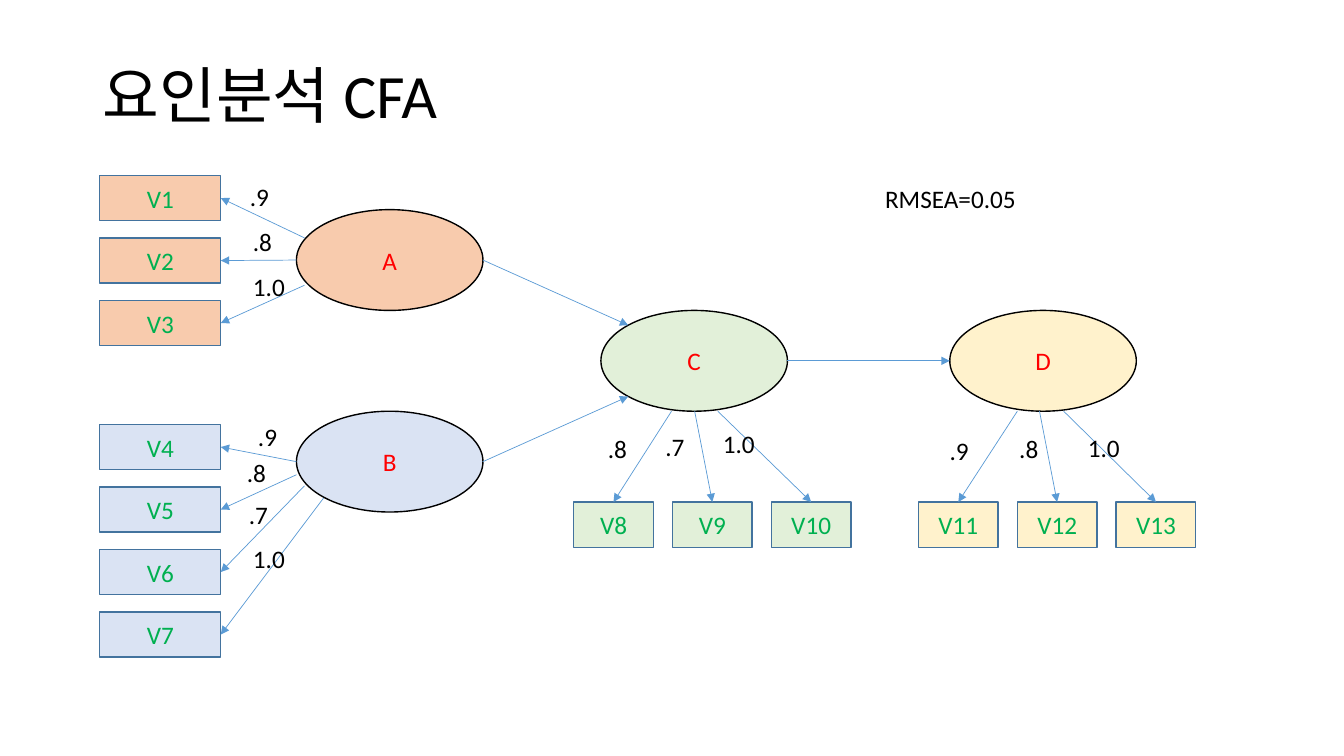
from dataclasses import dataclass
from math import sqrt

from lxml.etree import SubElement
from pptx import Presentation
from pptx.dml.color import RGBColor as Rgb
from pptx.enum.shapes import MSO_CONNECTOR as Link, MSO_SHAPE as Preset
from pptx.enum.text import MSO_ANCHOR as Anchor, MSO_AUTO_SIZE as AutoSize, PP_ALIGN as Align
from pptx.oxml.ns import qn
from pptx.util import Pt

PX = 9144


@dataclass(frozen=True)
class Theme:
    font: str = "Calibri"
    title_size: int = 44
    body_size: int = 18
    ink: str = "000000"
    factor_ink: str = "FF0000"
    indicator_ink: str = "00B050"
    indicator_edge: str = "43739E"
    arrow: str = "5B9BD5"
    peach: str = "F8CBAD"
    blue: str = "DAE3F3"
    green: str = "E2F0D9"
    yellow: str = "FFF2CC"


@dataclass(frozen=True)
class Box:
    left: int
    top: int
    width: int
    height: int

    def emu(self):
        return [round(v * PX) for v in (self.left, self.top, self.width, self.height)]

    def at(self, dx, dy):
        return self.left + dx, self.top + dy


@dataclass(frozen=True)
class Layout:
    first: tuple
    size: tuple
    step: tuple
    side: int


THEME = Theme()
FACTOR_SIZE = 185, 100
TOP, RIGHT = 0, 3


def beside(first_top):
    return Layout((-195, first_top), (120, 45), (0, 62), RIGHT)


def below(first_left):
    return Layout((first_left, 190), (79, 45), (98, 0), TOP)


def style(paragraph, size, color, align):
    paragraph.alignment = align
    paragraph.font.name = THEME.font
    paragraph.font.size = Pt(size)
    paragraph.font.color.rgb = Rgb.from_string(color)


def add_title(slide, box, wording):
    title = slide.shapes.title
    title.left, title.top, title.width, title.height = box.emu()
    frame = title.text_frame
    frame.text = wording
    frame.auto_size = AutoSize.NONE
    frame.vertical_anchor = Anchor.MIDDLE
    frame.paragraphs[0].line_spacing = 0.9
    style(frame.paragraphs[0], THEME.title_size, THEME.ink, Align.LEFT)


def add_node(slide, preset, box, name, fill, edge, ink):
    node = slide.shapes.add_shape(preset, *box.emu())
    node.shadow.inherit = False
    node.fill.solid()
    node.fill.fore_color.rgb = Rgb.from_string(fill)
    node.line.color.rgb = Rgb.from_string(edge)
    node.line.width = Pt(1)
    frame = node.text_frame
    frame.text = name
    frame.vertical_anchor = Anchor.MIDDLE
    style(frame.paragraphs[0], THEME.body_size, ink, Align.CENTER)
    return node


def add_arrow(slide, start, end):
    arrow = slide.shapes.add_connector(Link.STRAIGHT, *[round(v * PX) for v in (*start, *end)])
    arrow.line.color.rgb = Rgb.from_string(THEME.arrow)
    arrow.line.width = Pt(0.5)
    SubElement(arrow.line._get_or_add_ln(), qn("a:tailEnd"), type="triangle")
    SubElement(arrow._element.spPr, qn("a:effectLst"))
    return arrow


def add_label(slide, box, wording):
    frame = slide.shapes.add_textbox(*box.emu()).text_frame
    frame.text = wording
    frame.word_wrap = False
    frame.auto_size = AutoSize.SHAPE_TO_FIT_TEXT
    style(frame.paragraphs[0], THEME.body_size, THEME.ink, Align.LEFT)


def add_factor(slide, box, name, fill, layout, indicators):
    add_node(slide, Preset.OVAL, box, name, fill, THEME.ink, THEME.factor_ink)
    (first_x, first_y), (step_x, step_y) = layout.first, layout.step
    for i, (indicator, loading, start, label_at) in enumerate(indicators):
        place = Box(*box.at(first_x + i * step_x, first_y + i * step_y), *layout.size)
        node = add_node(slide, Preset.RECTANGLE, place, indicator, fill,
                        THEME.indicator_edge, THEME.indicator_ink)
        arrow = add_arrow(slide, box.at(*start), place.at(0, 0))
        arrow.end_connect(node, layout.side)
        add_label(slide, Box(*box.at(*label_at), 13 * len(loading) + 13, 40), loading)


def add_structure(slide, a, b, c, d):
    width, height = FACTOR_SIZE
    inset = (1 - 1 / sqrt(2)) / 2
    right = width, height / 2
    add_arrow(slide, a.at(*right), c.at(width * inset, height * inset))
    add_arrow(slide, b.at(*right), c.at(width * inset, height * (1 - inset)))
    add_arrow(slide, c.at(*right), d.at(0, height / 2))


def main():
    deck = Presentation()
    deck.slide_width, deck.slide_height = 1333 * PX, 750 * PX
    slide = deck.slides.add_slide(deck.slide_layouts[5])
    add_title(slide, Box(92, 40, 397, 115), "요인분석 CFA")

    a, b, c, d = [Box(*corner, *FACTOR_SIZE)
                  for corner in ((294, 208), (294, 408), (596, 308), (942, 308))]
    add_factor(slide, a, "A", THEME.peach, beside(-34), [
        ("V1", ".9", (8, 28), (-56, -33)),
        ("V2", ".8", (0, 50), (-53, 12)),
        ("V3", "1.0", (8, 75), (-53, 56)),
    ])
    add_factor(slide, b, "B", THEME.blue, beside(13), [
        ("V4", ".9", (0, 50), (-48, 5)),
        ("V5", ".8", (0, 63), (-59, 41)),
        ("V6", ".7", (8, 74), (-57, 82)),
        ("V7", "1.0", (27, 86), (-53, 126)),
    ])
    add_factor(slide, c, "C", THEME.green, below(-27), [
        ("V8", ".8", (70, 100), (-3, 117)),
        ("V9", ".7", (93, 100), (54, 115)),
        ("V10", "1.0", (116, 100), (111, 112)),
    ])
    add_factor(slide, d, "D", THEME.yellow, below(-31), [
        ("V11", ".9", (67, 100), (-10, 119)),
        ("V12", ".8", (89, 100), (59, 117)),
        ("V13", "1.0", (113, 100), (127, 116)),
    ])
    add_structure(slide, a, b, c, d)
    add_label(slide, Box(868, 177, 151, 40), "RMSEA=0.05")
    deck.save("out.pptx")


if __name__ == "__main__":
    main()
